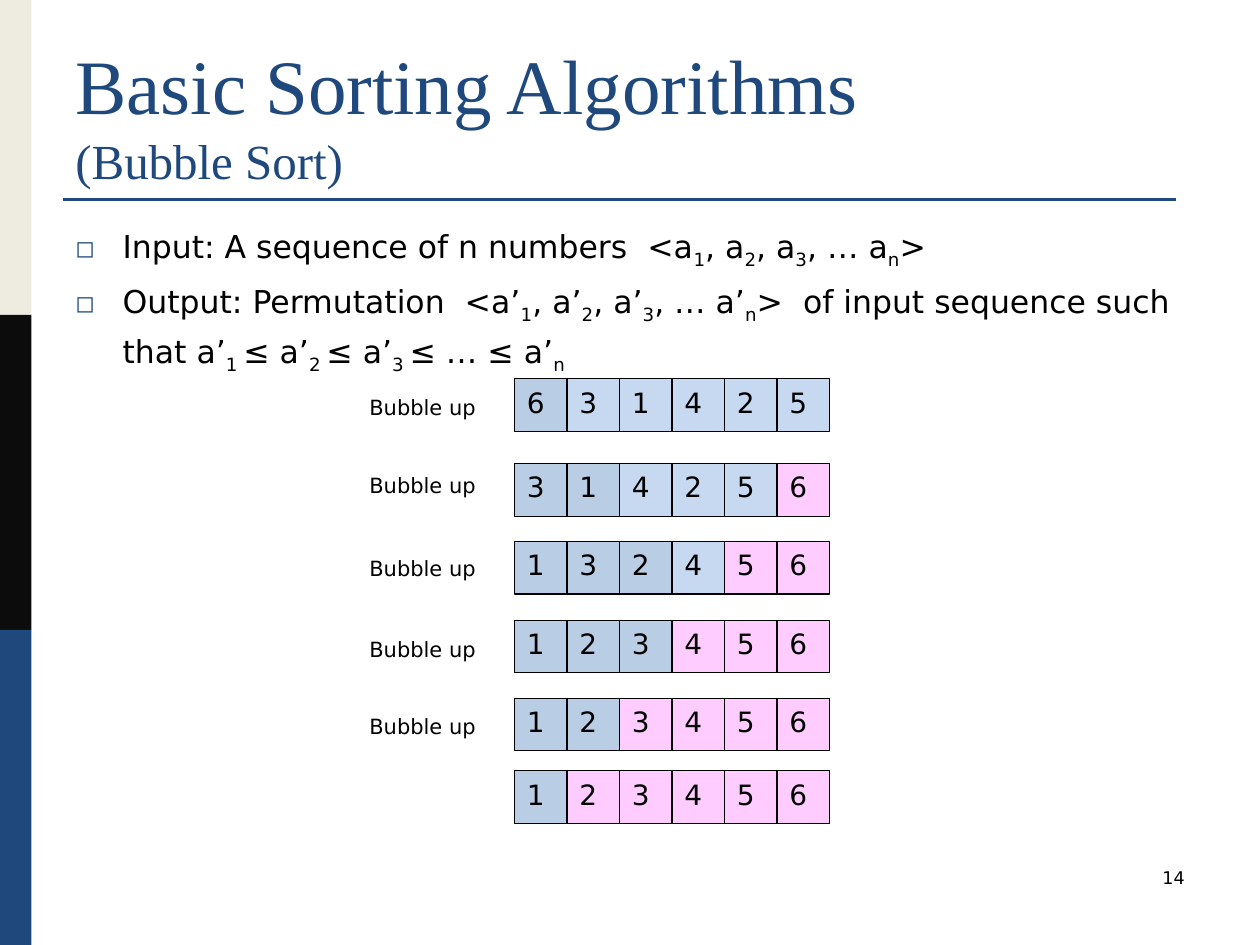
"""Build a slide that shows the passes of bubble sort."""
from dataclasses import dataclass
from typing import Any

from lxml.etree import SubElement
from pptx import Presentation
from pptx.dml.color import RGBColor as RGB
from pptx.enum.shapes import MSO_CONNECTOR as CONN, MSO_SHAPE as SHAPE
from pptx.enum.text import MSO_ANCHOR as ANCHOR, MSO_AUTO_SIZE as FIT, PP_ALIGN as ALIGN
from pptx.oxml.ns import qn
from pptx.util import Pt


@dataclass(frozen=True)
class Theme:
    serif: str = "Times New Roman"
    sans: str = "DejaVu Sans"
    navy: str = "1F497D"
    ink: str = "000000"
    cream: str = "EEECE1"
    black: str = "0C0C0C"
    visited: str = "B9CDE5"
    waiting: str = "C6D9F1"
    ordered: str = "FFCCFF"
    title: int = 44
    subtitle: int = 28
    body: int = 18
    cell: int = 16
    label: int = 12
    number: int = 10


@dataclass(frozen=True)
class Box:
    left: float
    top: float
    width: float
    height: float

    def lengths(self) -> tuple:
        return tuple(Pt(v) for v in (self.left, self.top, self.width, self.height))


@dataclass(frozen=True)
class Pass:
    values: str
    top: float
    label_top: float | None = None


T = Theme()
CELL, ROW_LEFT = 30, 294
BAND_WIDTH, BAND_HEIGHT = 18, 180
INDENT = 27
BANDS = (T.cream, T.black, T.navy)
PASSES = (
    Pass("631425", 216.5, 221.75),
    Pass("314256", 265, 266.5),
    Pass("132456", 309.5, 314),
    Pass("123456", 354.5, 360),
    Pass("123456", 399, 404),
    Pass("123456", 440.5),
)
SUBSCRIPT_MARK = "|"
BULLETS = (
    ("Input: A sequence of n numbers  <a|1|, a|2|, a|3|, … a|n|>", 1.0),
    ("Output: Permutation  <a’|1|, a’|2|, a’|3|, … a’|n|>  of input sequence such that "
     "a’|1 |≤ a’|2 |≤ a’|3 |≤ … ≤ a’|n", 1.15),
)


def apply(obj: Any, formats: dict) -> None:
    for name, value in formats.items():
        setattr(obj, name, value)


def add_run(p: Any, text: str, size: int, font: str = T.sans, color: str = T.ink) -> Any:
    r = p.add_run()
    r.text = text
    apply(r.font, {"name": font, "size": Pt(size)})
    r.font.color.rgb = RGB.from_string(color)
    return r


def add_text(s: Any, box: Box, **formats: Any) -> Any:
    tf = s.shapes.add_textbox(*box.lengths()).text_frame
    apply(tf, {"word_wrap": True, **formats})
    return tf


def add_rect(s: Any, box: Box, fill: str, line: str | None = None) -> Any:
    sp = s.shapes.add_shape(SHAPE.RECTANGLE, *box.lengths())
    sp.shadow.inherit = False
    sp.fill.solid()
    sp.fill.fore_color.rgb = RGB.from_string(fill)
    if line:
        sp.line.color.rgb = RGB.from_string(line)
        sp.line.width = Pt(0.75)
    else:
        sp.line.fill.background()
    return sp


def add_rule(s: Any) -> None:
    ln = s.shapes.add_connector(CONN.STRAIGHT, Pt(36), Pt(114), Pt(672), Pt(114))
    ln.line.color.rgb = RGB.from_string(T.navy)
    ln.line.width = Pt(1.5)
    SubElement(ln._element.spPr, qn("a:effectLst"))


def add_title(s: Any) -> None:
    tf = add_text(s, Box(36, 21.5, 648, 90), vertical_anchor=ANCHOR.BOTTOM)
    p = tf.paragraphs[0]
    add_run(p, "Basic Sorting Algorithms", T.title, T.serif, T.navy)
    p.add_line_break()
    add_run(p, "(Bubble Sort)", T.subtitle, T.serif, T.navy)


def set_bullet(p: Any) -> None:
    pPr = p._p.get_or_add_pPr()
    apply_to = {"marL": Pt(INDENT), "indent": -Pt(INDENT)}
    for name, value in apply_to.items():
        pPr.set(name, str(value))
    SubElement(SubElement(pPr, qn("a:buClr")), qn("a:srgbClr"), val=T.navy)
    SubElement(pPr, qn("a:buSzPct"), val="75000")
    SubElement(pPr, qn("a:buFont"), typeface=T.sans)
    SubElement(pPr, qn("a:buChar"), char="◻")


def add_bullets(s: Any) -> None:
    tf = add_text(s, Box(36, 126, 648, 84))
    for i, (text, spacing) in enumerate(BULLETS):
        p = tf.add_paragraph() if i else tf.paragraphs[0]
        apply(p, {"line_spacing": spacing, "space_before": Pt(3.6)})
        set_bullet(p)
        for j, part in enumerate(text.split(SUBSCRIPT_MARK)):
            r = add_run(p, part, T.body)
            if j % 2:
                r._r.get_or_add_rPr().set("baseline", "-25000")


def cell_fill(step: int, col: int, count: int) -> str:
    if col >= count - step:
        return T.ordered
    return T.visited if col <= step else T.waiting


def add_pass(s: Any, step: int, row: Pass) -> None:
    for col, value in enumerate(row.values):
        fill = cell_fill(step, col, len(row.values))
        sp = add_rect(s, Box(ROW_LEFT + col * CELL, row.top, CELL, CELL), fill, T.ink)
        tf = sp.text_frame
        tf.vertical_anchor = ANCHOR.TOP
        p = tf.paragraphs[0]
        p.alignment = ALIGN.LEFT
        add_run(p, value, T.cell)
    if row.label_top is not None:
        tf = add_text(s, Box(204, row.label_top, 78, 21.5), auto_size=FIT.SHAPE_TO_FIT_TEXT)
        add_run(tf.paragraphs[0], "Bubble up", T.label)


def main() -> None:
    prs = Presentation()
    apply(prs, {"slide_width": Pt(720), "slide_height": Pt(540)})
    s = prs.slides.add_slide(prs.slide_layouts[6])
    for i, color in enumerate(BANDS):
        add_rect(s, Box(0, i * BAND_HEIGHT, BAND_WIDTH, BAND_HEIGHT), color)
    add_rule(s)
    add_title(s)
    add_bullets(s)
    p = add_text(s, Box(516, 492, 168, 36)).paragraphs[0]
    p.alignment = ALIGN.RIGHT
    add_run(p, "14", T.number)
    for step, row in enumerate(PASSES):
        add_pass(s, step, row)
    prs.save("out.pptx")


if __name__ == "__main__":
    main()
